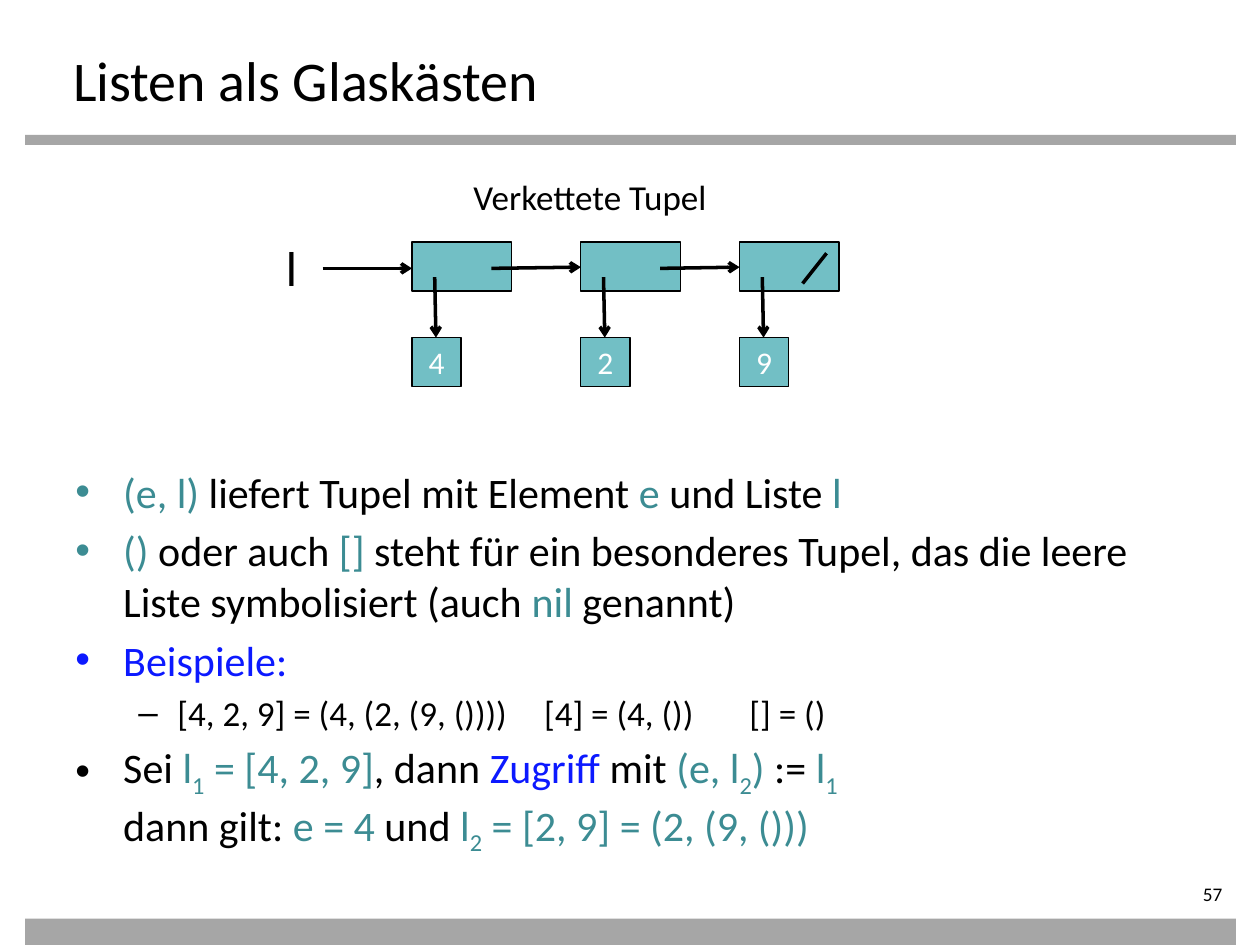
from dataclasses import dataclass

from lxml.etree import SubElement
from pptx import Presentation
from pptx.dml.color import RGBColor
from pptx.enum.shapes import MSO_CONNECTOR, MSO_SHAPE
from pptx.enum.text import MSO_ANCHOR, PP_ALIGN
from pptx.oxml.ns import qn
from pptx.util import Inches, Pt


@dataclass(frozen=True)
class Theme:
    font: str = "Calibri"
    black: str = "000000"
    white: str = "FFFFFF"
    grey: str = "A6A6A6"
    fill: str = "72BFC5"
    code: str = "3C8C93"
    accent: str = "0C19FF"
    title: int = 32
    pointer: int = 28
    body: int = 24
    small: int = 20
    value: int = 18
    number: int = 11


T = Theme()
WIDTH, HEIGHT = 10, 7.5

# Linked list in per cent of the slide: left edge of each cell and its value
CELLS = [(32.7, "4"), (46.1, "2"), (58.7, "9")]
CELL_TOP, VALUE_TOP = 25.6, 35.73
CELL_W, VALUE_W, CELL_H = 7.9, 3.9, 5.2

# Text pieces: (text, colour, is subscript)
K, C, A = T.black, T.code, T.accent


def code_sub(text, sub):
    return [(text, C, False), (sub, C, True)]


BULLETS = [
    (0, [("(e, l) ", C, False), ("liefert Tupel mit Element ", K, False),
         ("e", C, False), (" und Liste ", K, False), ("l", C, False)]),
    (0, [("() ", C, False), ("oder auch ", K, False), ("[] ", C, False),
         ("steht für ein besonderes Tupel, das die leere Liste "
          "symbolisiert (auch ", K, False),
         ("nil ", C, False), ("genannt)", K, False)]),
    (0, [("Beispiele:", A, False)]),
    (1, [("[4, 2, 9] = (4, (2, (9, ())))\t[4] = (4, ())\t[] = ()", K, False)]),
    (0, [("Sei ", K, False), *code_sub("l", "1"),
         (" = [4, 2, 9]", C, False), (", dann ", K, False),
         ("Zugriff ", A, False), ("mit ", K, False),
         *code_sub("(e, l", "2"), (") ", C, False), (":= ", K, False),
         *code_sub("l", "1"), ("\n", K, False),
         ("dann gilt: ", K, False), ("e = 4 ", C, False), ("und", K, False),
         *code_sub(" l", "2"), (" = [2, 9] = (2, (9, ()))", C, False)]),
]
# Per level: left margin, hanging indent, bullet sign, type size, tab stops
LEVELS = [(0.38, 0.38, "•", T.body, []),
          (0.81, 0.31, "–", T.small, [3.72, 5.35])]


def x(share):
    return Inches(WIDTH * share / 100)


def y(share):
    return Inches(HEIGHT * share / 100)


def frame(left, top, width, height):
    return x(left), y(top), x(width), y(height)


def add_run(p, text, size, color=T.black, sub=False):
    r = p.add_run()
    r.text = text
    r.font.name, r.font.size = T.font, Pt(size)
    r.font.color.rgb = RGBColor.from_string(color)
    if sub:
        r.font._element.set("baseline", "-25000")


def add_box(s, place, color, text="", outlined=True):
    sp = s.shapes.add_shape(MSO_SHAPE.RECTANGLE, *frame(*place))
    sp.shadow.inherit = False
    sp.fill.solid()
    sp.fill.fore_color.rgb = RGBColor.from_string(color)
    if outlined:
        sp.line.color.rgb = RGBColor.from_string(T.black)
        sp.line.width = Pt(0.75)
    else:
        sp.line.fill.background()
    if text:
        tf = sp.text_frame
        tf.vertical_anchor = MSO_ANCHOR.MIDDLE
        tf.paragraphs[0].alignment = PP_ALIGN.CENTER
        add_run(tf.paragraphs[0], text, T.value, T.white)


def add_line(s, x1, y1, x2, y2, arrow=True):
    cx = s.shapes.add_connector(MSO_CONNECTOR.STRAIGHT, x(x1), y(y1), x(x2), y(y2))
    cx.line.color.rgb = RGBColor.from_string(T.black)
    cx.line.width = Pt(2)
    if arrow:
        SubElement(cx.line._get_or_add_ln(), qn("a:tailEnd"), type="arrow")
    SubElement(cx._element.spPr, qn("a:effectLst"))


def add_text(s, place, text="", size=T.body, wrap=True, insets=None,
             align=PP_ALIGN.LEFT):
    tf = s.shapes.add_textbox(*frame(*place)).text_frame
    tf.word_wrap = wrap
    if insets:
        (tf.margin_left, tf.margin_top,
         tf.margin_right, tf.margin_bottom) = map(Inches, insets)
    tf.paragraphs[0].alignment = align
    if text:
        add_run(tf.paragraphs[0], text, size)
    return tf


def add_bullets(s, place, items):
    tf = add_text(s, place)
    for i, (level, pieces) in enumerate(items):
        margin, hanging, sign, size, tabs = LEVELS[level]
        p = tf.paragraphs[0] if i == 0 else tf.add_paragraph()
        p.level = level
        if i:
            p.space_before = Pt(size * 0.2)
        pPr = p._p.get_or_add_pPr()
        pPr.set("marL", str(Inches(margin)))
        pPr.set("indent", str(-Inches(hanging)))
        SubElement(pPr, qn("a:buFont"), typeface="Arial")
        SubElement(pPr, qn("a:buChar"), char=sign)
        if tabs:
            tab_list = SubElement(pPr, qn("a:tabLst"))
            for tab in tabs:
                SubElement(tab_list, qn("a:tab"), pos=str(Inches(tab)), algn="l")
        for text, color, sub in pieces:
            if text == "\n":
                p.add_line_break()
            else:
                add_run(p, text, size, color, sub)


def add_linked_list(s):
    add_text(s, (36.6, 17.87, 21.4, 5.87), "Verkettete Tupel", T.small, wrap=False)
    add_text(s, (21.7, 24.53, 2.9, 7.6), "l", T.pointer, wrap=False)
    for left, value in CELLS:
        add_box(s, (left, CELL_TOP, CELL_W, CELL_H), T.fill)
        add_box(s, (left, VALUE_TOP, VALUE_W, CELL_H), T.fill, value)
    # Arrows to each value, from the name to the first cell, then cell to cell
    for left, _ in CELLS:
        add_line(s, left + 1.8, 29.33, left + 1.9, VALUE_TOP)
    add_line(s, 25.6, 28.4, CELLS[0][0], 28.4)
    for (left, _), (following, _) in zip(CELLS, CELLS[1:]):
        add_line(s, left + 6.3, 28.4, following, 28.27)
    # Slash for the end of the list
    end = CELLS[-1][0]
    add_line(s, end + 6.9, 26.8, end + 5, 30, arrow=False)


def main():
    prs = Presentation()
    prs.slide_width, prs.slide_height = Inches(WIDTH), Inches(HEIGHT)
    s = prs.slides.add_slide(prs.slide_layouts[6])

    # Bars
    for top, height in ((14.27, 1.07), (97.2, 2.8)):
        add_box(s, (2, top, 96.1, height), T.grey, outlined=False)

    # Title, diagram, bullets and page number
    add_text(s, (5.1, 3.73, 90, 7.33), "Listen als Glaskästen", T.title,
             insets=(0.07, 0.08, 0.1, 0))
    add_linked_list(s)
    add_bullets(s, (5, 48.67, 90, 45.47), BULLETS)
    add_text(s, (87, 93.33, 11, 2.93), "57", T.number,
             insets=(0, 0, 0.1, 0), align=PP_ALIGN.RIGHT)

    prs.save("out.pptx")


if __name__ == "__main__":
    main()
